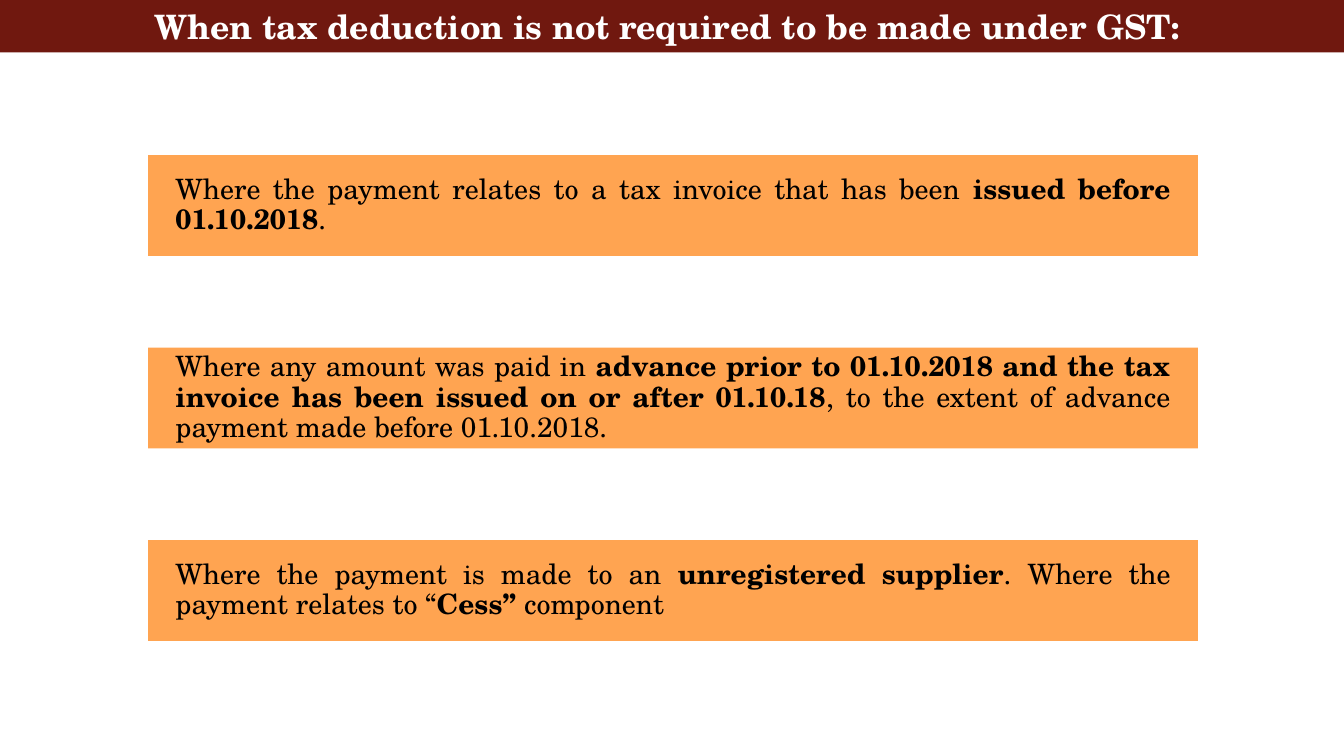
from pptx import Presentation
from pptx.dml.color import RGBColor
from pptx.enum.shapes import MSO_SHAPE as Shape
from pptx.enum.text import MSO_ANCHOR as Anchor, PP_ALIGN as Align
from pptx.util import Pt

PX = 9144
FONT = "TeX Gyre Schola"
MAROON = RGBColor(0x70, 0x18, 0x0F)
ORANGE = RGBColor(0xFF, 0xA4, 0x51)
WHITE = RGBColor(0xFF, 0xFF, 0xFF)
BLACK = RGBColor(0x00, 0x00, 0x00)

TITLE = "When tax deduction is not required to be made under GST: "
CASES = [
    [("Where the payment relates to a tax invoice that has been ", False),
     ("issued before 01.10.2018", True),
     (".", False)],
    [("Where any amount was paid in ", False),
     ("advance prior to 01.10.2018 and the tax invoice has been issued "
      "on or after 01.10.18", True),
     (", to the extent of advance payment made before 01.10.2018. ", False)],
    [("Where the payment is made to an ", False),
     ("unregistered supplier", True),
     (". Where the payment relates to “", False),
     ("Cess” ", True),
     ("component", False)],
]


def add_panel(page, box, fill, inset, anchor):
    """Add a filled rectangle and return its text frame."""
    panel = page.shapes.add_shape(Shape.RECTANGLE, *(side * PX for side in box))
    panel.shadow.inherit = False
    panel.fill.solid()
    panel.fill.fore_color.rgb = fill
    panel.line.fill.background()
    frame = panel.text_frame
    frame.word_wrap = True
    frame.vertical_anchor = anchor
    across, down = inset
    frame.margin_left = frame.margin_right = across * PX
    frame.margin_top = frame.margin_bottom = down * PX
    return frame


def add_runs(para, runs, size, color):
    """Write (text, bold) runs into a paragraph."""
    for text, bold in runs:
        span = para.add_run()
        span.text = text
        span.font.name = FONT
        span.font.size = Pt(size)
        span.font.bold = bold
        span.font.color.rgb = color


def add_title(page, box):
    """Draw the title band."""
    para = add_panel(page, box, MAROON, (0, 6), Anchor.TOP).paragraphs[0]
    para.alignment = Align.CENTER
    add_runs(para, [(TITLE, True)], 24, WHITE)


def add_cases(page, box, panel_height):
    """Spread the case panels evenly from top to bottom of the box."""
    left, top, width, height = box
    step = (height - panel_height) // (len(CASES) - 1)
    for index, runs in enumerate(CASES):
        panel_box = (left, top + index * step, width, panel_height)
        frame = add_panel(page, panel_box, ORANGE, (27, 27), Anchor.MIDDLE)
        para = frame.paragraphs[0]
        para.alignment = Align.JUSTIFY
        para.line_spacing = 0.9
        add_runs(para, runs, 20, BLACK)


def main():
    """Build and save the deck."""
    deck = Presentation()
    deck.slide_width, deck.slide_height = 1333 * PX, 750 * PX
    page = deck.slides.add_slide(deck.slide_layouts[6])
    add_cases(page, (147, 154, 1041, 482), 100)
    add_title(page, (0, 0, 1333, 52))
    deck.save("out.pptx")


if __name__ == "__main__":
    main()
